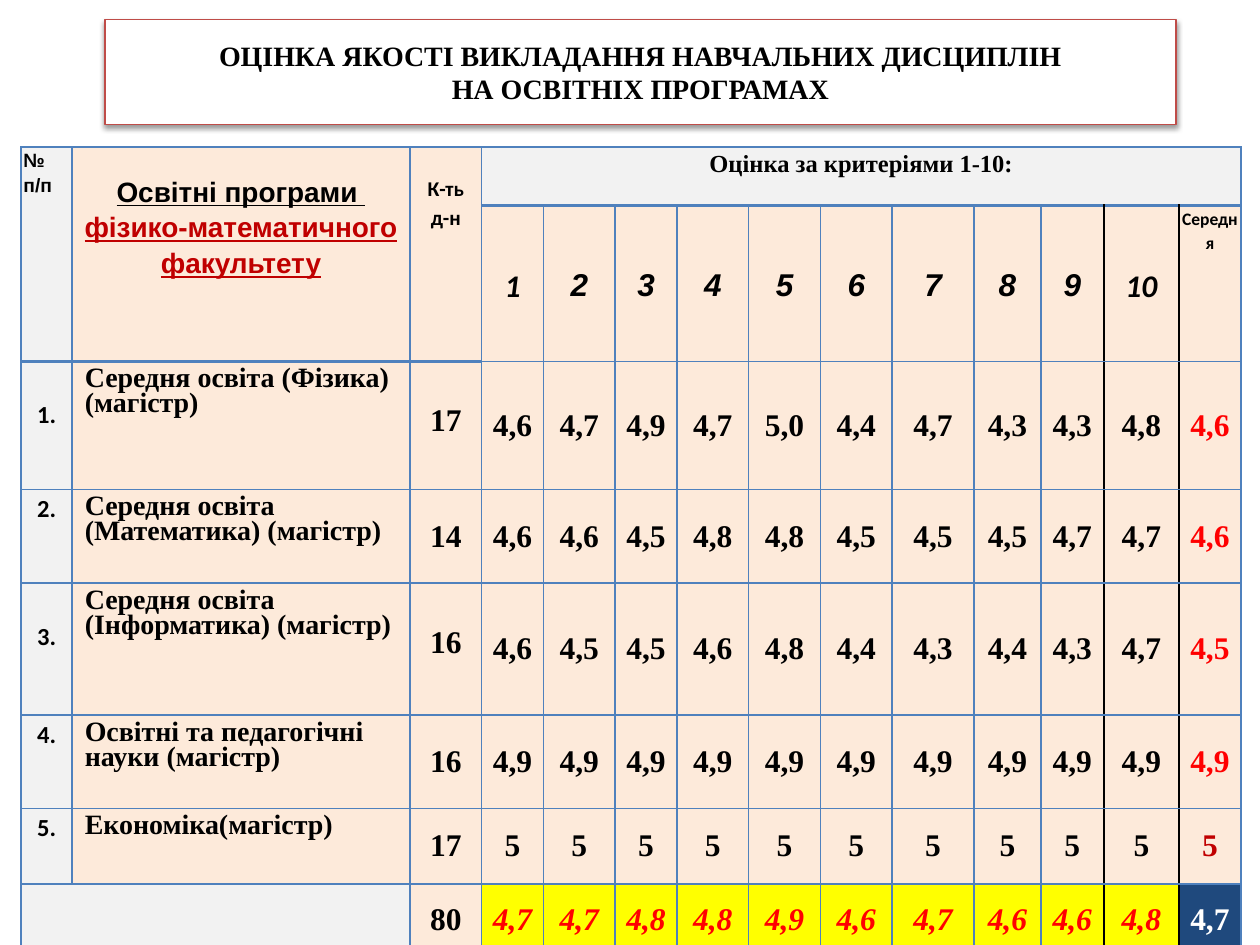
from lxml.etree import SubElement
from pptx import Presentation
from pptx.dml.color import RGBColor
from pptx.enum.text import MSO_ANCHOR as Anchor, MSO_AUTO_SIZE as AutoSize, PP_ALIGN as Align
from pptx.oxml.ns import qn
from pptx.util import Pt

BLUE, PEACH, GREY, BLACK = "4F81BD", "FDEADA", "F2F2F2", "000000"
RED, DARK_RED, YELLOW, NAVY, WHITE = "FF0000", "C00000", "FFFF00", "1F497D", "FFFFFF"
SERIF, SANS, PLAIN = "Times New Roman", "Arial", "Calibri"

COLUMN_WIDTHS = [29.3, 193, 41, 35.3, 41, 35.3, 41, 41, 41, 46.8, 38.2, 36, 43, 35.3]
ROW_HEIGHTS = [33.5, 89, 73.4, 53.3, 75.6, 53.3, 43.2, 40.3]
FIRST_SCORE, AVERAGE = 3, 13

# Programme, number of disciplines, scores 1-10 and the average
PROGRAMMES = [
    ("Середня освіта (Фізика) (магістр)", "17",
     "4,6 4,7 4,9 4,7 5,0 4,4 4,7 4,3 4,3 4,8 4,6"),
    ("Середня освіта (Математика) (магістр)", "14",
     "4,6 4,6 4,5 4,8 4,8 4,5 4,5 4,5 4,7 4,7 4,6"),
    ("Середня освіта (Інформатика) (магістр)", "16",
     "4,6 4,5 4,5 4,6 4,8 4,4 4,3 4,4 4,3 4,7 4,5"),
    ("Освітні та педагогічні науки (магістр)", "16",
     "4,9 4,9 4,9 4,9 4,9 4,9 4,9 4,9 4,9 4,9 4,9"),
    ("Економіка(магістр)", "17", "5 5 5 5 5 5 5 5 5 5 5"),
]
TOTAL_SCORES = "4,7 4,7 4,8 4,8 4,9 4,6 4,7 4,6 4,6 4,8 4,7"


def colour(value):
    return RGBColor.from_string(value)


def paint(fill, value):
    fill.solid()
    fill.fore_color.rgb = colour(value)


def write_lines(frame, lines, layout, font):
    """Write one paragraph a line; a line may carry its own font values."""
    for index, line in enumerate(lines):
        text, own = line if isinstance(line, tuple) else (line, {})
        para = frame.paragraphs[0] if index == 0 else frame.add_paragraph()
        for name, value in layout.items():
            setattr(para, name, value)
        span = para.add_run()
        span.text = text
        values = {"bold": True, "color": BLACK, **font, **own}
        span.font.color.rgb = colour(values.pop("color"))
        for name, value in values.items():
            setattr(span.font, name, value)


def fill_cell(cell, lines, background, font, layout=None, sides=1.4, top=0, bottom=0,
              anchor=Anchor.TOP):
    paint(cell.fill, background)
    margins = {"margin_left": sides, "margin_right": sides,
               "margin_top": top, "margin_bottom": bottom}
    for name, value in margins.items():
        setattr(cell, name, Pt(value))
    cell.vertical_anchor = anchor
    write_lines(cell.text_frame, lines, {"alignment": Align.CENTER, **(layout or {})}, font)


def draw_borders(cell, row, column):
    black_left = row > 0 and column in (12, 13)
    black_right = row > 0 and column in (11, 12)
    thick = row == 0 or (row == 1 and column < FIRST_SCORE)
    borders = {"L": (BLACK if black_left else BLUE, 1),
               "R": (BLACK if black_right else BLUE, 1),
               "T": (BLUE, 1),
               "B": (BLUE, 2 if thick else 1)}
    properties = cell._tc.get_or_add_tcPr()
    for side, (value, width) in borders.items():
        line = SubElement(properties, qn(f"a:ln{side}"), w=str(Pt(width)))
        SubElement(SubElement(line, qn("a:solidFill")), qn("a:srgbClr"), val=value)


def add_shadow(shape):
    effects = SubElement(shape._element.spPr, qn("a:effectLst"))
    shadow = SubElement(effects, qn("a:outerShdw"), blurRad=str(Pt(3.1)), dist=str(Pt(1.6)),
                        dir="5400000", rotWithShape="0")
    tint = SubElement(shadow, qn("a:srgbClr"), val=BLACK)
    SubElement(tint, qn("a:alpha"), val="38000")


def add_title(page):
    box = page.shapes.title
    place = {"left": 60, "top": 18, "width": 612, "height": 46}
    for name, value in place.items():
        setattr(box, name, Pt(value))
    paint(box.fill, WHITE)
    box.line.color.rgb = colour("BF4C48")
    box.line.width = Pt(0.75)
    add_shadow(box)
    box.text_frame.auto_size = AutoSize.SHAPE_TO_FIT_TEXT
    write_lines(box.text_frame,
                ["ОЦІНКА ЯКОСТІ ВИКЛАДАННЯ НАВЧАЛЬНИХ ДИСЦИПЛІН", "НА ОСВІТНІХ ПРОГРАМАХ"],
                {"alignment": Align.CENTER}, {"size": Pt(16), "name": SERIF})


def add_grid(page):
    table = page.shapes.add_table(len(ROW_HEIGHTS), len(COLUMN_WIDTHS), Pt(12), Pt(84),
                                  Pt(sum(COLUMN_WIDTHS)), Pt(sum(ROW_HEIGHTS))).table
    table.first_row = table.horz_banding = False
    for column, width in zip(table.columns, COLUMN_WIDTHS):
        column.width = Pt(width)
    for row, height in zip(table.rows, ROW_HEIGHTS):
        row.height = Pt(height)
    for row in range(len(ROW_HEIGHTS)):
        for column in range(len(COLUMN_WIDTHS)):
            draw_borders(table.cell(row, column), row, column)
    for column in range(FIRST_SCORE):
        table.cell(0, column).merge(table.cell(1, column))
    table.cell(0, FIRST_SCORE).merge(table.cell(0, AVERAGE))
    table.cell(7, 0).merge(table.cell(7, 1))
    return table


def fill_header(table):
    loose = {"line_spacing": 1.15}
    spaced = {**loose, "space_after": Pt(10)}
    accent = {"color": DARK_RED}
    fill_cell(table.cell(0, 0), ["№", "п/п"], GREY, {"size": Pt(11), "name": SANS},
              {**loose, "alignment": Align.LEFT})
    fill_cell(table.cell(0, 1),
              ["Освітні програми ", ("фізико-математичного", accent), ("факультету", accent)],
              PEACH, {"size": Pt(16), "name": SANS, "underline": True}, loose, top=14.5)
    fill_cell(table.cell(0, 2), ["К-ть", "д-н"], PEACH, {"size": Pt(12), "name": PLAIN},
              loose, top=14.5)
    fill_cell(table.cell(0, FIRST_SCORE), ["Оцінка за критеріями 1-10:"], GREY,
              {"size": Pt(14), "name": SERIF}, spaced)
    for number in range(1, 11):
        face = PLAIN if number in (1, 10) else SANS
        fill_cell(table.cell(1, FIRST_SCORE + number - 1), [str(number)], PEACH,
                  {"size": Pt(18), "name": face, "italic": True}, spaced,
                  anchor=Anchor.MIDDLE)
    fill_cell(table.cell(1, AVERAGE), ["Середня"], PEACH, {"size": Pt(10), "name": PLAIN}, spaced)


def fill_count(cell, count, lowered=False):
    fill_cell(cell, [count], PEACH, {"size": Pt(18), "name": SERIF}, sides=7.2,
              top=24.3 if lowered else 3.6, bottom=3.6,
              anchor=Anchor.TOP if lowered else Anchor.MIDDLE)


def fill_scores(table, row, scores, background, font, last_background, last_font):
    for column, score in enumerate(scores.split(), FIRST_SCORE):
        last = column == AVERAGE
        fill_cell(table.cell(row, column), [score], last_background if last else background,
                  {"size": Pt(18), "name": SERIF, **(last_font if last else font)},
                  sides=5, anchor=Anchor.MIDDLE)


def fill_programmes(table):
    for row, (programme, count, scores) in enumerate(PROGRAMMES, 2):
        lowered = row in (2, 4)  # the tall rows start their text one line down
        fill_cell(table.cell(row, 0), [f"{row - 1}."], GREY, {"size": Pt(14), "name": PLAIN},
                  {"line_spacing": 1.15}, sides=2.9, top=19.7 if lowered else 0)
        fill_cell(table.cell(row, 1), [programme], PEACH, {"size": Pt(16), "name": SERIF},
                  {"line_spacing": 0.8, "alignment": Align.LEFT}, sides=7.2, top=3.6, bottom=3.6)
        fill_count(table.cell(row, 2), count, lowered)
        average_colour = DARK_RED if row == 6 else RED
        fill_scores(table, row, scores, PEACH, {}, PEACH, {"color": average_colour})


def fill_totals(table):
    paint(table.cell(7, 0).fill, GREY)
    fill_count(table.cell(7, 2), "80")
    fill_scores(table, 7, TOTAL_SCORES, YELLOW, {"color": RED, "italic": True},
                NAVY, {"color": WHITE})


def main():
    deck = Presentation()
    deck.slide_width, deck.slide_height = Pt(720), Pt(540)
    page = deck.slides.add_slide(deck.slide_layouts[5])
    # Heading
    add_title(page)
    # Table of scores
    table = add_grid(page)
    fill_header(table)
    fill_programmes(table)
    fill_totals(table)
    deck.save("out.pptx")


if __name__ == "__main__":
    main()
